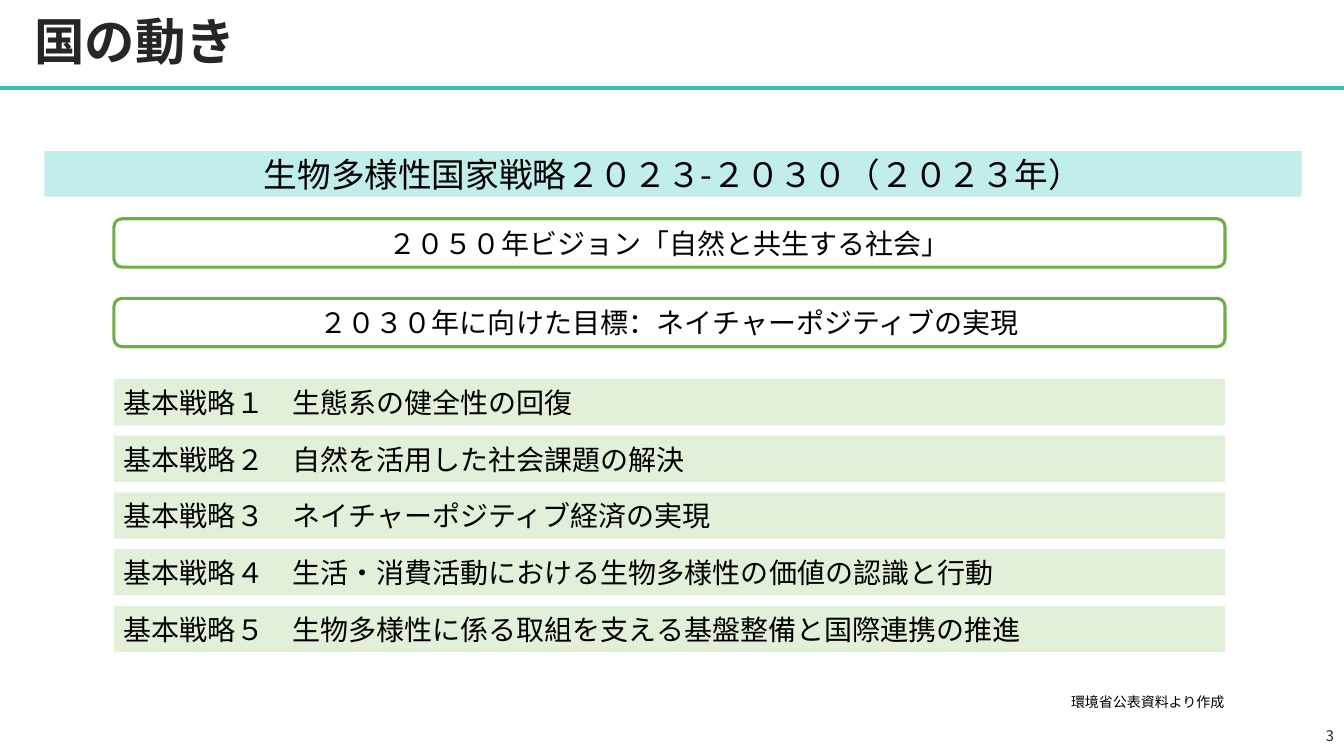
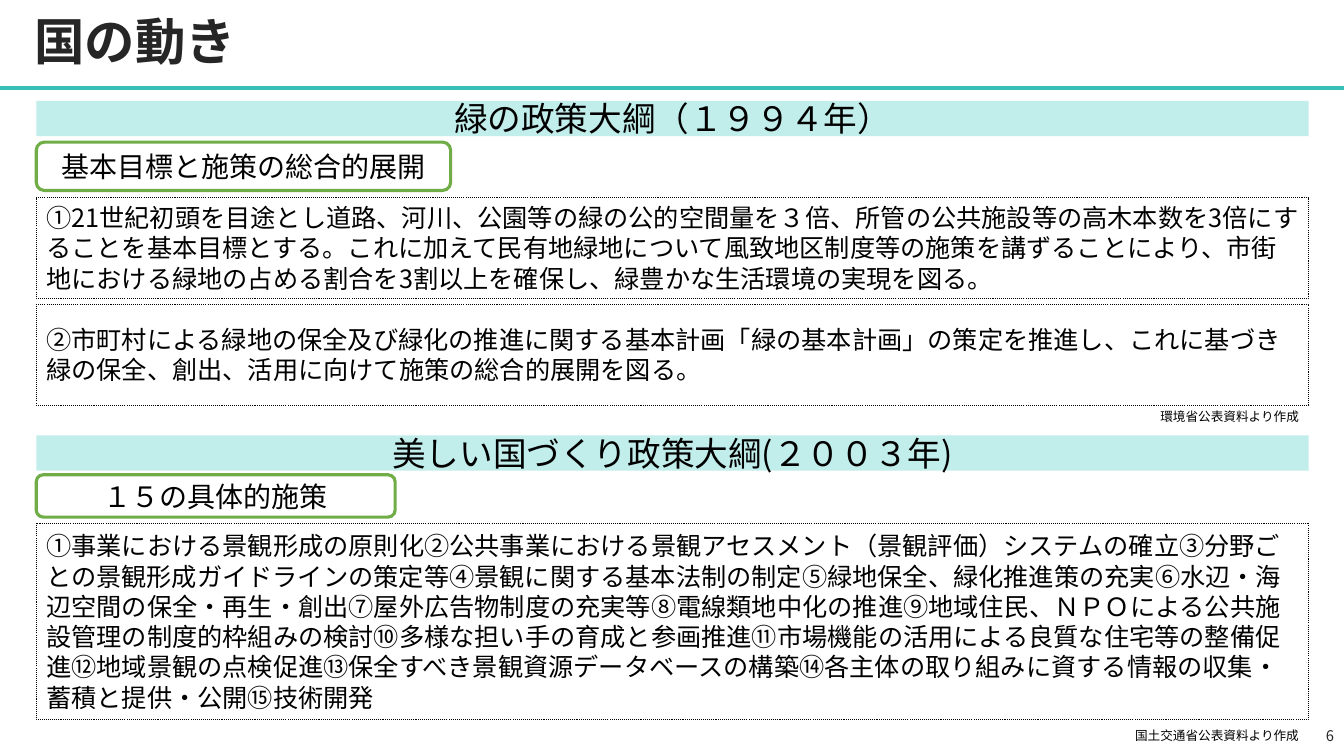
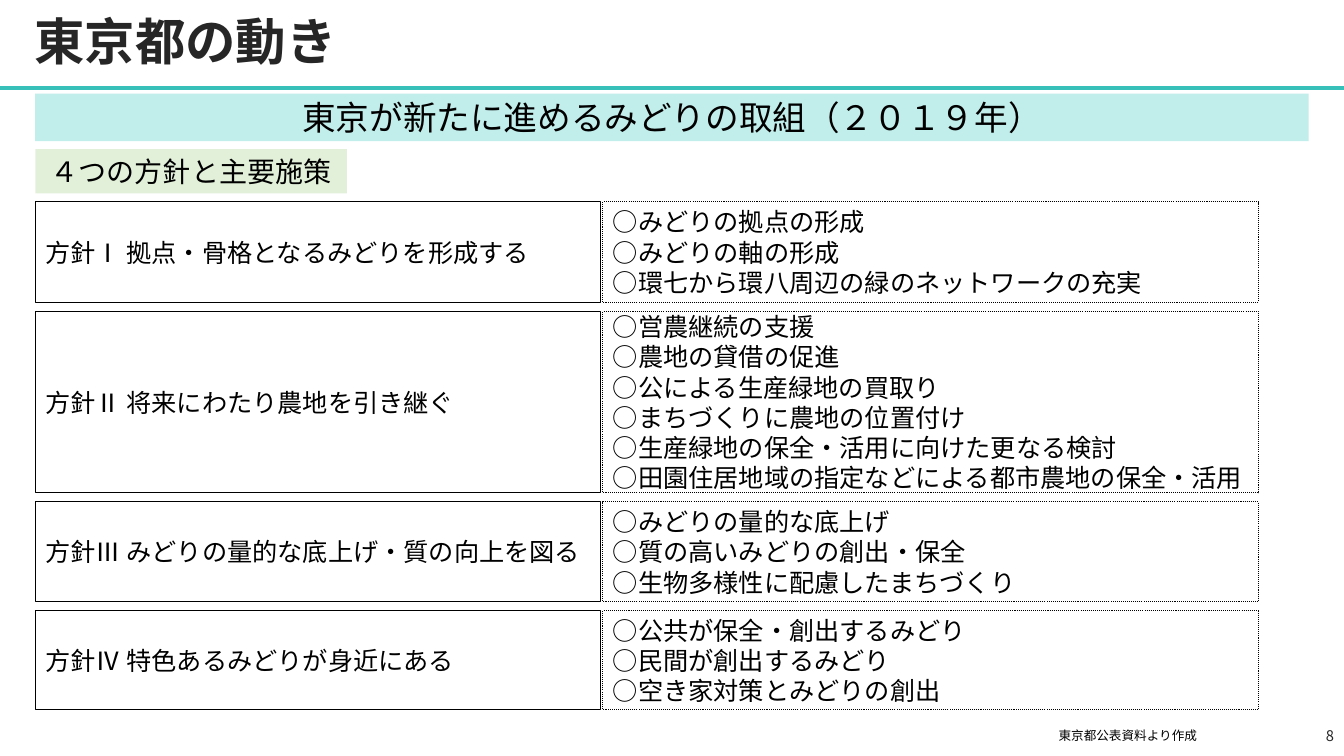
from lxml import etree
from pptx import Presentation
from pptx.dml.color import RGBColor
from pptx.enum.dml import MSO_LINE
from pptx.enum.shapes import MSO_CONNECTOR, MSO_SHAPE
from pptx.enum.text import MSO_ANCHOR, MSO_AUTO_SIZE, PP_ALIGN
from pptx.oxml.ns import qn
from pptx.util import Inches, Pt

FONT = "Noto Sans CJK JP"
BLACK = RGBColor(0x00, 0x00, 0x00)
DARK = RGBColor(0x26, 0x26, 0x26)
TEAL = RGBColor(0x37, 0xBF, 0xB9)
PALE_TEAL = RGBColor(0xC1, 0xED, 0xEB)
GREEN = RGBColor(0x70, 0xAD, 0x47)
PALE_GREEN = RGBColor(0xE2, 0xF0, 0xD9)

RECT, ROUND = MSO_SHAPE.RECTANGLE, MSO_SHAPE.ROUNDED_RECTANGLE
LEFT, CENTER, RIGHT = PP_ALIGN.LEFT, PP_ALIGN.CENTER, PP_ALIGN.RIGHT

BAND = dict(fill=PALE_TEAL, size=24, align=CENTER)
TAG = dict(fill=PALE_GREEN, size=20, align=CENTER)
STRATEGY = dict(fill=PALE_GREEN, size=20)
GOAL = dict(kind=ROUND, line=GREEN, width=2.25, size=20, align=CENTER)
SOLID = dict(line=BLACK)
DOTTED = dict(line=BLACK, dash=MSO_LINE.ROUND_DOT)

STRATEGY_BAND = "生物多様性国家戦略２０２３-２０３０（２０２３年）"
GOALS = [
    "２０５０年ビジョン「自然と共生する社会」",
    "２０３０年に向けた目標：ネイチャーポジティブの実現",
]
STRATEGIES = [
    "基本戦略１　生態系の健全性の回復",
    "基本戦略２　自然を活用した社会課題の解決",
    "基本戦略３　ネイチャーポジティブ経済の実現",
    "基本戦略４　生活・消費活動における生物多様性の価値の認識と行動",
    "基本戦略５　生物多様性に係る取組を支える基盤整備と国際連携の推進",
]

# (text, style, top, width, height)
OUTLINES = [
    ("緑の政策大綱（１９９４年）", BAND, 1, 12.62, 0.35),
    ("基本目標と施策の総合的展開", GOAL, 1.41, 4.11, 0.48),
    ("①21世紀初頭を目途とし道路、河川、公園等の緑の公的空間量を３倍、所管の公共施設等の"
     "高木本数を3倍にすることを基本目標とする。これに加えて民有地緑地について風致地区制度等の"
     "施策を講ずることにより、市街地における緑地の占める割合を3割以上を確保し、"
     "緑豊かな生活環境の実現を図る。", DOTTED, 1.96, 12.62, 1),
    ("②市町村による緑地の保全及び緑化の推進に関する基本計画「緑の基本計画」の策定を推進し、"
     "これに基づき緑の保全、創出、活用に向けて施策の総合的展開を図る。", DOTTED, 3.02, 12.62, 1),
    ("美しい国づくり政策大綱(２００３年)", BAND, 4.32, 12.62, 0.35),
    ("１５の具体的施策", GOAL, 4.71, 3.56, 0.42),
    ("①事業における景観形成の原則化②公共事業における景観アセスメント（景観評価）システムの確立"
     "③分野ごとの景観形成ガイドラインの策定等④景観に関する基本法制の制定"
     "⑤緑地保全、緑化推進策の充実⑥水辺・海辺空間の保全・再生・創出⑦屋外広告物制度の充実等"
     "⑧電線類地中化の推進⑨地域住民、ＮＰＯによる公共施設管理の制度的枠組みの検討"
     "⑩多様な担い手の育成と参画推進⑪市場機能の活用による良質な住宅等の整備促進"
     "⑫地域景観の点検促進⑬保全すべき景観資源データベースの構築"
     "⑭各主体の取り組みに資する情報の収集・蓄積と提供・公開⑮技術開発", DOTTED, 5.19, 12.62, 1.95),
]

TOKYO_BAND = "東京が新たに進めるみどりの取組（２０１９年）"
TOKYO_TAG = "４つの方針と主要施策"
# (policy, height, measures)
POLICIES = [
    ("方針Ⅰ 拠点・骨格となるみどりを形成する", 1,
     ["○みどりの拠点の形成", "○みどりの軸の形成", "○環七から環八周辺の緑のネットワークの充実"]),
    ("方針Ⅱ 将来にわたり農地を引き継ぐ", 1.8,
     ["○営農継続の支援", "○農地の貸借の促進", "○公による生産緑地の買取り",
      "○まちづくりに農地の位置付け", "○生産緑地の保全・活用に向けた更なる検討",
      "○田園住居地域の指定などによる都市農地の保全・活用"]),
    ("方針Ⅲ みどりの量的な底上げ・質の向上を図る", 0.99,
     ["○みどりの量的な底上げ", "○質の高いみどりの創出・保全", "○生物多様性に配慮したまちづくり"]),
    ("方針Ⅳ 特色あるみどりが身近にある", 0.98,
     ["○公共が保全・創出するみどり", "○民間が創出するみどり", "○空き家対策とみどりの創出"]),
]


def write(tf, lines, size, color=BLACK, align=LEFT, bold=False, anchor=MSO_ANCHOR.MIDDLE):
    tf.word_wrap = True
    tf.auto_size = MSO_AUTO_SIZE.NONE
    tf.vertical_anchor = anchor
    for i, line in enumerate(lines):
        p = tf.add_paragraph() if i else tf.paragraphs[0]
        p.alignment = align
        r = p.add_run()
        r.text = line
        r.font.size = Pt(size)
        r.font.bold = bold
        r.font.color.rgb = color
        r.font.name = FONT
        etree.SubElement(r.font._element, qn("a:ea"), typeface=FONT)


def add_box(s, lines, x, y, w, h, kind=RECT, fill=None, line=None, width=0.75,
            dash=None, size=18, align=LEFT):
    sp = s.shapes.add_shape(kind, Inches(x), Inches(y), Inches(w), Inches(h))
    sp.shadow.inherit = False
    if fill is None:
        sp.fill.background()
    else:
        sp.fill.solid()
        sp.fill.fore_color.rgb = fill
    if line is None:
        sp.line.fill.background()
    else:
        sp.line.color.rgb = line
        sp.line.width = Pt(width)
        if dash is not None:
            sp.line.dash_style = dash
    write(sp.text_frame, lines, size, align=align)


def add_label(s, text, x, y, w, h, size, **style):
    tb = s.shapes.add_textbox(Inches(x), Inches(y), Inches(w), Inches(h))
    write(tb.text_frame, [text], size, align=RIGHT, **style)


def add_credit(s, text, x, y, size=9):
    add_label(s, text, x, y, 4.6, 0.25, size, anchor=MSO_ANCHOR.TOP)


def add_slide(prs, title, number):
    """Add a slide with the shared title, rule and page number."""
    s = prs.slides.add_slide(prs.slide_layouts[5])
    rule = s.shapes.add_connector(MSO_CONNECTOR.STRAIGHT, 0, Inches(0.87),
                                  prs.slide_width, Inches(0.87))
    rule.line.color.rgb = TEAL
    rule.line.width = Pt(3)
    etree.SubElement(rule._element.spPr, qn("a:effectLst"))
    t = s.shapes.title
    t.left, t.top, t.width, t.height = Inches(0.24), 0, Inches(12.83), Inches(0.87)
    write(t.text_frame, [title], 36, DARK, bold=True)
    t.text_frame.paragraphs[0].line_spacing = 0.9
    add_label(s, str(number), 10.33, 7.1, 3, 0.4, 10.5, color=DARK)
    return s


def build_strategy(prs):
    s = add_slide(prs, "国の動き", 3)
    add_box(s, [STRATEGY_BAND], 0.44, 1.5, 12.47, 0.45, **BAND)
    for i, goal in enumerate(GOALS):
        add_box(s, [goal], 1.13, 2.17 + 0.79 * i, 11.02, 0.48, **GOAL)
    for i, strategy in enumerate(STRATEGIES):
        add_box(s, [strategy], 1.13, 3.76 + 0.5625 * i, 11.02, 0.46, **STRATEGY)
    add_credit(s, "環境省公表資料より作成", 7.64, 6.83, 10)


def build_outlines(prs):
    s = add_slide(prs, "国の動き", 6)
    for text, style, y, w, h in OUTLINES:
        add_box(s, [text], 0.36, y, w, h, **style)
    add_credit(s, "環境省公表資料より作成", 8.38, 4.01)
    add_credit(s, "国土交通省公表資料より作成", 8.38, 7.17)


def build_tokyo(prs):
    s = add_slide(prs, "東京都の動き", 8)
    add_box(s, [TOKYO_BAND], 0.35, 0.93, 12.63, 0.47, **BAND)
    add_box(s, [TOKYO_TAG], 0.35, 1.48, 3.09, 0.44, **TAG)
    y = 2
    for policy, h, measures in POLICIES:
        add_box(s, [policy], 0.35, y, 5.61, h, **SOLID)
        add_box(s, measures, 5.98, y, 6.5, h, **DOTTED)
        y += h + 0.09
    add_credit(s, "東京都公表資料より作成", 7.37, 7.17)


def main():
    prs = Presentation()
    prs.slide_width, prs.slide_height = Inches(13.33), Inches(7.5)
    build_strategy(prs)
    build_outlines(prs)
    build_tokyo(prs)
    prs.save("out.pptx")


if __name__ == "__main__":
    main()
